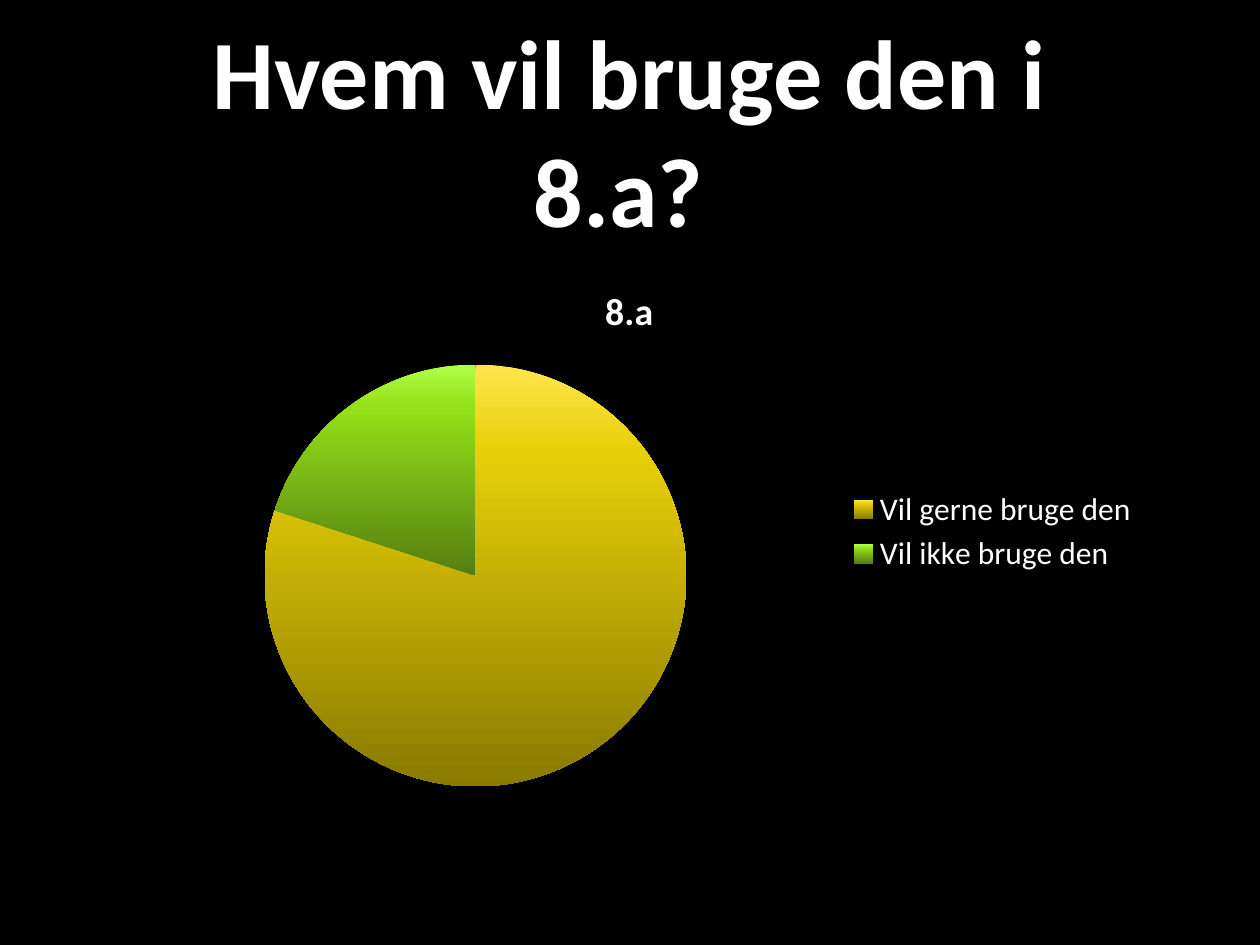
from dataclasses import dataclass

from lxml import etree
from pptx import Presentation
from pptx import util as u
from pptx.chart.data import CategoryChartData
from pptx.dml.color import RGBColor
from pptx.enum import chart as charts, text
from pptx.oxml import ns


@dataclass(frozen=True)
class Theme:
    """Colours, font and type sizes of the slide."""
    font: str = "Calibri"
    background: str = "000000"
    ink: str = "FFFFFF"
    title_size: float = 56
    chart_title_size: float = 21.6
    chart_size: float = 18
    yellow: tuple = ("FFE650", "E8D008", "8A7A00")
    green: tuple = ("B0FF48", "95E01A", "557F10")
    stop_percents: tuple = (0, 20, 100)


THEME = Theme()


def style_font(font, size, bold=False):
    """Apply the theme font and ink colour."""
    font.name = THEME.font
    font.size = u.Pt(size)
    font.bold = bold
    font.color.rgb = RGBColor.from_string(THEME.ink)


def add_run(paragraph, words, size, bold=False):
    """Append a styled run to a paragraph."""
    run = paragraph.add_run()
    run.text = words
    style_font(run.font, size, bold)


def add_title(slide, words, left, top, width, height):
    """Add the centred slide title."""
    shape = slide.shapes.add_textbox(left, top, width, height)
    frame = shape.text_frame
    frame.word_wrap = True
    frame.vertical_anchor = text.MSO_ANCHOR.MIDDLE
    paragraph = frame.paragraphs[0]
    paragraph.alignment = text.PP_ALIGN.CENTER
    add_run(paragraph, words, THEME.title_size, bold=True)


def set_gradient_stops(stop_list, colours):
    """Replace a gradient's stops with the given colours."""
    for stop in list(stop_list):
        stop_list.remove(stop)
    for percent, colour in zip(THEME.stop_percents, colours):
        stop = etree.SubElement(stop_list, ns.qn("a:gs"), pos=str(percent * 1000))
        etree.SubElement(stop, ns.qn("a:srgbClr"), val=colour)


def shade_slices(series, slice_colours):
    """Shade each pie slice from top to bottom."""
    for index in range(len(slice_colours)):
        slice_format = series.points[index].format
        slice_format.fill.gradient()
        slice_format.fill.gradient_angle = 270
        slice_format.line.fill.background()
    stop_lists = series._element.findall(".//" + ns.qn("a:gsLst"))
    for stop_list, colours in zip(stop_lists, slice_colours):
        set_gradient_stops(stop_list, colours)


def add_pie(slide, name, slices, left, top, width, height):
    """Add a pie with title and legend from (label, value, colours) slices."""
    labels, values, slice_colours = zip(*slices)
    data = CategoryChartData()
    data.categories = labels
    data.add_series(name, values)
    chart = slide.shapes.add_chart(
        charts.XL_CHART_TYPE.PIE, left, top, width, height, data).chart
    style_font(chart.font, THEME.chart_size)
    chart.has_title = True
    add_run(chart.chart_title.text_frame.paragraphs[0], name,
            THEME.chart_title_size, bold=True)
    chart.has_legend = True
    chart.legend.position = charts.XL_LEGEND_POSITION.RIGHT
    chart.legend.include_in_layout = False
    plot = chart.plots[0]
    plot.vary_by_categories = True
    shade_slices(plot.series[0], slice_colours)


def main():
    """Build and save the slide."""
    presentation = Presentation()
    presentation.slide_width = u.Inches(10)
    presentation.slide_height = u.Inches(7.5)
    slide = presentation.slides.add_slide(presentation.slide_layouts[6])
    slide.background.fill.solid()
    slide.background.fill.fore_color.rgb = RGBColor.from_string(THEME.background)

    left, width = u.Inches(0.85), u.Inches(8.29)
    slices = (
        ("Vil gerne bruge den", 80, THEME.yellow),
        ("Vil ikke bruge den", 20, THEME.green),
    )
    add_title(slide, "Hvem vil bruge den i 8.a? ",
              left, u.Inches(0.12), width, u.Inches(1.81))
    add_pie(slide, "8.a", slices, left, u.Inches(2.06), width, u.Inches(4.32))
    presentation.save("out.pptx")


if __name__ == "__main__":
    main()
